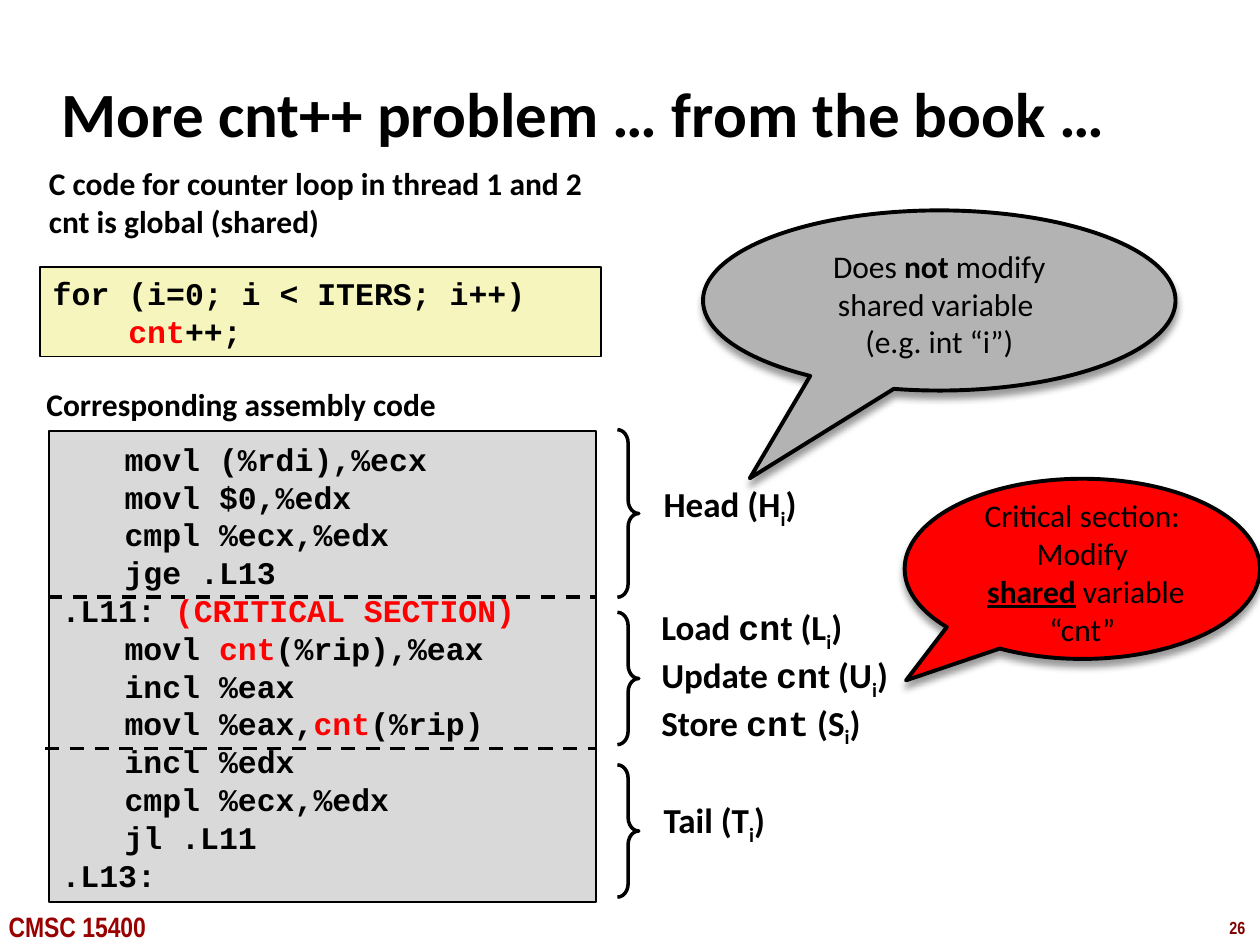
from lxml import etree
from pptx import Presentation
from pptx.dml.color import RGBColor
from pptx.enum.dml import MSO_LINE
from pptx.enum.shapes import MSO_CONNECTOR, MSO_SHAPE
from pptx.enum.text import MSO_ANCHOR, PP_ALIGN
from pptx.oxml.ns import qn
from pptx.util import Inches, Pt

RECT, BRACE = MSO_SHAPE.RECTANGLE, MSO_SHAPE.LEFT_BRACE
CALLOUT = MSO_SHAPE.OVAL_CALLOUT
STRAIGHT, DASH = MSO_CONNECTOR.STRAIGHT, MSO_LINE.DASH
MIDDLE, TOP = MSO_ANCHOR.MIDDLE, MSO_ANCHOR.TOP
LEFT, CENTER, RIGHT = PP_ALIGN.LEFT, PP_ALIGN.CENTER, PP_ALIGN.RIGHT

COLUMNS, ROWS, CELL = 100, 75, 0.1
CODE_LEADING = 21.6
CODE_LINE = 3.0
COLORS = {
    "ink": "000000", "alert": "FF0000", "assembly": "D9D9D9", "source": "F6F5BD",
    "remark": "B3B3B3", "course": "990000", "page": "800000",
}
BODY = {"font": "Calibri", "size": 18, "color": "ink", "bold": True}
CODE = {**BODY, "font": "Courier New"}
LABEL = {**BODY, "size": 20}
REMARK = {**BODY, "bold": False}
SHARED = {"color": "alert"}
MONO = {"font": "Courier New"}
SUB = {"baseline": -25000}


def grid(*cells):
    """Turn grid cells into slide lengths."""
    return [Inches(round(cell * CELL, 3)) for cell in cells]


def rgb(name):
    """Look up a named colour."""
    return RGBColor.from_string(COLORS[name])


def write(shape, paragraphs, base, align=LEFT, anchor=MIDDLE, wrap=True, leading=None):
    """Fill a shape with paragraphs of (text, style changes) runs."""
    frame = shape.text_frame
    frame.word_wrap = wrap
    frame.vertical_anchor = anchor
    for index, pieces in enumerate(paragraphs):
        paragraph = frame.paragraphs[0] if index == 0 else frame.add_paragraph()
        paragraph.alignment = align
        if leading:
            paragraph.line_spacing = Pt(leading)
        for text, changes in pieces:
            style = {**base, **changes}
            run = paragraph.add_run()
            run.text = text
            run.font.name = style["font"]
            run.font.size = Pt(style["size"])
            run.font.bold = style["bold"]
            run.font.underline = style.get("underline")
            run.font.color.rgb = rgb(style["color"])
            if "baseline" in style:
                run.font._element.set("baseline", str(style["baseline"])) if hasattr(
                    run.font, "_element") else run._r.get_or_add_rPr().set(
                    "baseline", str(style["baseline"]))


def add_text(slide, box, paragraphs, base, **layout):
    """Add a text box."""
    write(slide.shapes.add_textbox(*grid(*box)), paragraphs, base, **layout)


def add_figure(slide, kind, box, fill, width):
    """Add an outlined preset shape without a theme shadow."""
    figure = slide.shapes.add_shape(kind, *grid(*box))
    figure.shadow.inherit = False
    if fill:
        figure.fill.solid()
        figure.fill.fore_color.rgb = rgb(fill)
    else:
        figure.fill.background()
    figure.line.color.rgb = rgb("ink")
    figure.line.width = Pt(width)
    return figure


def add_code(slide, box, fill, lines):
    """Add a filled code panel."""
    panel = add_figure(slide, RECT, box, fill, 1)
    write(panel, lines, CODE, leading=CODE_LEADING)


def add_divider(slide, left, right, row):
    """Add a dashed line between two code sections."""
    divider = slide.shapes.add_connector(STRAIGHT, *grid(left, row, right, row))
    divider.line.color.rgb = rgb("ink")
    divider.line.width = Pt(2)
    divider.line.dash_style = DASH
    etree.SubElement(divider._element.spPr, qn("a:effectLst"))


def add_callout(slide, box, fill, pointer, lines):
    """Add a speech bubble with a soft shadow below it."""
    bubble = add_figure(slide, CALLOUT, box, fill, 2.25)
    bubble.adjustments[0], bubble.adjustments[1] = pointer
    effects = bubble._element.spPr.find(qn("a:effectLst"))
    shadow = etree.SubElement(effects, qn("a:outerShdw"), blurRad=str(Pt(4)),
                              dist=str(Pt(3.4)), dir="5400000", rotWithShape="0")
    tint = etree.SubElement(shadow, qn("a:srgbClr"), val=COLORS["ink"])
    etree.SubElement(tint, qn("a:alpha"), val="40000")
    bubble.text_frame.margin_bottom = 0
    write(bubble, lines, REMARK, align=CENTER)


def source_region(slide, box):
    """Place the C loop under its two-line heading."""
    left, top, width, height = box
    add_text(slide, (left - 0.3, top - 8.7, 54, height),
             [[("C code for counter loop in thread 1 and 2", {})],
              [("cnt is global (shared)", {})]], BODY)
    add_code(slide, box, "source", [
        [("for (i=0; i < ITERS; i++)", {})],
        [("    ", {}), ("cnt", SHARED), ("++;", {})]])


def assembly_region(slide, box):
    """Place the assembly listing with its heading and section dividers."""
    left, top, width, height = box
    add_text(slide, (left - 1.2, top - 4.1, 38.6, 4),
             [[("Corresponding assembly code", {})]], BODY)
    add_code(slide, box, "assembly", [
        [("\tmovl (%rdi),%ecx", {})],
        [("\tmovl $0,%edx", {})],
        [("\tcmpl %ecx,%edx", {})],
        [("\tjge .L13", {})],
        [(".L11: ", {}), ("(CRITICAL SECTION)", SHARED)],
        [("\tmovl ", {}), ("cnt", SHARED), ("(%rip),%eax", {})],
        [("\tincl %eax", {})],
        [("\tmovl %eax,", {}), ("cnt", SHARED), ("(%rip)", {})],
        [("\tincl %edx", {})],
        [("\tcmpl %ecx,%edx", {})],
        [("\tjl .L11", {})],
        [(".L13:", {})]])
    for lines_above, overhang in ((4, 0.1), (8, 0.3)):
        add_divider(slide, left - overhang, left + width,
                    top + 1.2 + lines_above * CODE_LINE)


def section_region(slide, box):
    """Place a brace and a label beside each section of the listing."""
    left, top, brace_width, label_width = box

    def named(symbol, *words):
        return [*words, (f" ({symbol}", {}), ("i", SUB), (")", {})]

    def step(verb, symbol):
        return [(verb + " ", {}), ("cn", MONO), (f"t ({symbol}", {}), ("i", SUB), (")", {})]

    head = [named("H", ("Head", {}))]
    steps = [step("Load", "L"), step("Update", "U"), named("S", ("Store ", {}), ("cnt", MONO))]
    tail = [named("T", ("Tail", {}))]
    sections = (
        (0, 13.3, 3.9, 12.7, 4.4, RIGHT, head),
        (14.5, 10.5, 14.1, label_width, 11.1, LEFT, steps),
        (26.6, 10.5, 29, 10.2, 4.4, RIGHT, tail),
    )
    for offset, span, label_offset, width, height, align, words in sections:
        brace = add_figure(slide, BRACE, (left, top + offset, brace_width, span), None, 2)
        brace.rotation = 180
        brace.adjustments[0], brace.adjustments[1] = 0.625, 0.5
        add_text(slide, (left + 2.5, top + label_offset, width, height), words,
                 LABEL, align=align, wrap=False)


def remark_region(slide, box):
    """Place the two remarks on shared data."""
    left, top, width, height = box
    add_callout(slide, (left, top, 37.5, 14.3), "remark", (-0.401, 0.987), [
        [("Does ", {}), ("not", {"bold": True}), (" modify", {})],
        [("shared variable ", {})],
        [("(e.g. int “i”)", {})]])
    add_callout(slide, (left + width - 28.2, top + height - 14.3, 28.2, 14.3),
                "alert", (-0.496, 0.619), [
        [("Critical section:", {})],
        [("Modify", {})],
        [(" ", {}), ("shared", {"bold": True, "underline": True}), (" variable", {})],
        [("“cnt”", {})]])


def footer_region(slide, box):
    """Place the course code at the left and the page number at the right."""
    left, top, width, height = box
    narrow = {**BODY, "font": "Arial Narrow"}
    add_text(slide, (left, top, 14.2, height), [[("CMSC 15400", {})]],
             {**narrow, "size": 16, "color": "course"}, anchor=TOP, wrap=False)
    add_text(slide, (left + width - 3.4, top + 0.6, 3.4, 2.7), [[("26", {})]],
             {**narrow, "size": 10, "color": "page"}, anchor=TOP, wrap=False)


def main():
    """Build and save the slide."""
    deck = Presentation()
    deck.slide_width, deck.slide_height = grid(COLUMNS, ROWS)
    slide = deck.slides.add_slide(deck.slide_layouts[6])
    footer_region(slide, (-0.3, 71.7, 100.3, 3.7))
    add_text(slide, (3.9, 4.8, 93.6, 8.3),
             [[("More cnt++ problem … from the book …", {})]], {**BODY, "size": 36})
    assembly_region(slide, (3.9, 34.2, 43.4, 37.4))
    source_region(slide, (3.2, 21.2, 44.5, 7.1))
    section_region(slide, (49, 34.1, 1.7, 20.3))
    remark_region(slide, (55.8, 16.7, 44.2, 35.6))
    deck.save("out.pptx")


if __name__ == "__main__":
    main()
